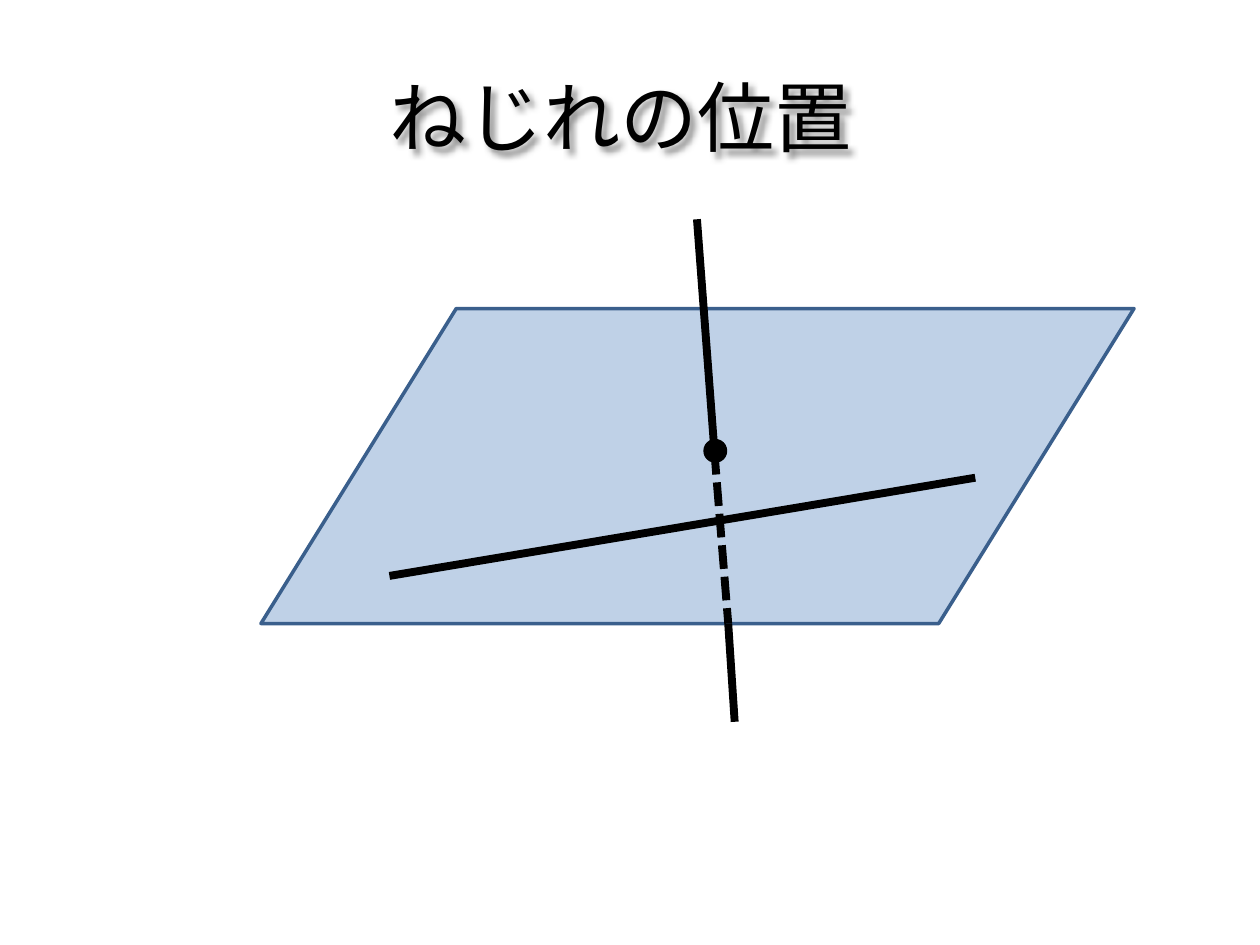
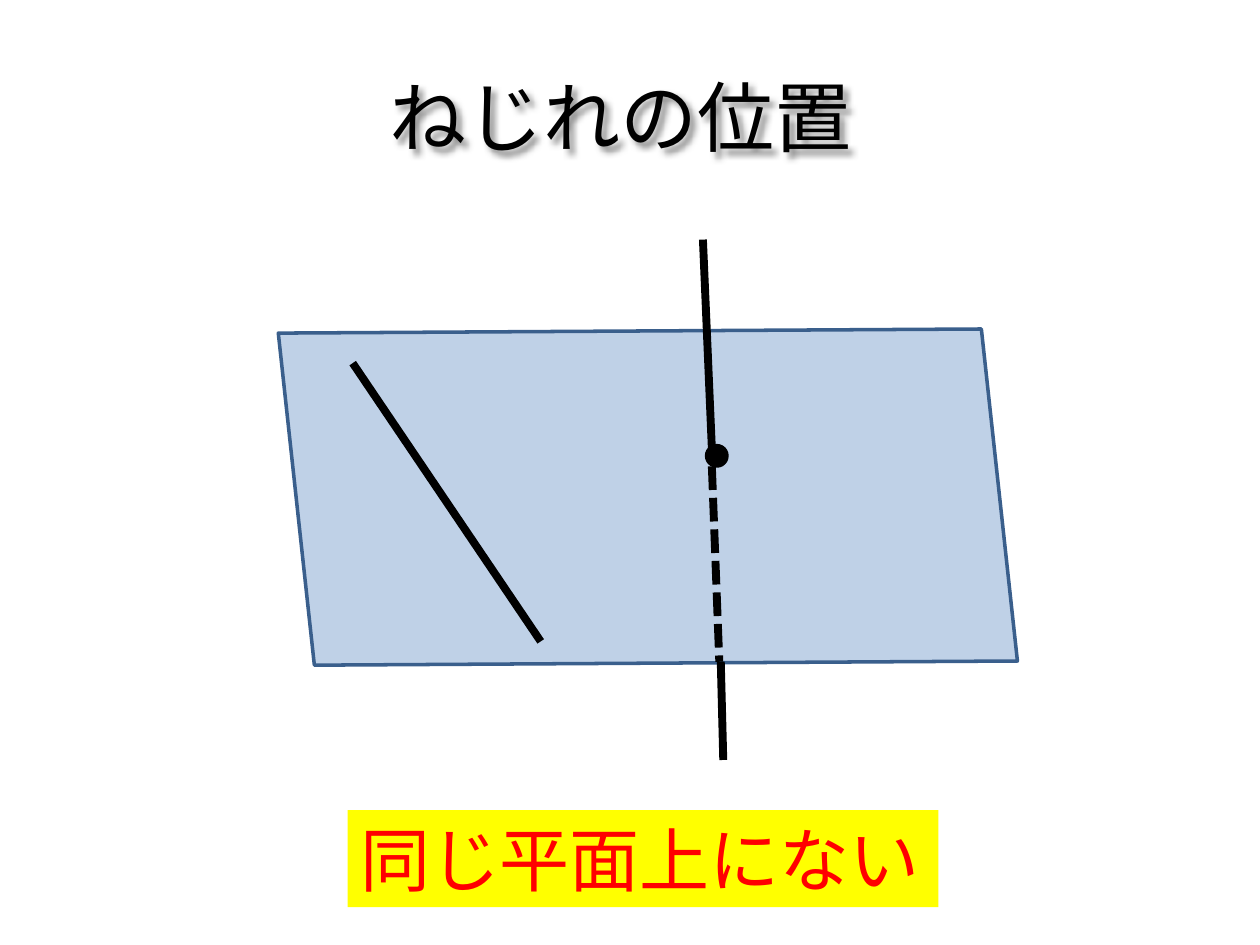
from lxml.etree import SubElement
from pptx import Presentation
from pptx.dml.color import RGBColor
from pptx.enum.dml import MSO_LINE
from pptx.enum.lang import MSO_LANGUAGE_ID
from pptx.enum.shapes import MSO_CONNECTOR, MSO_SHAPE
from pptx.enum.text import MSO_ANCHOR, MSO_AUTO_SIZE, PP_ALIGN
from pptx.oxml.ns import qn
from pptx.util import Cm, Pt

# Content: places in centimetres, lines as (start, end)
TITLE = "ねじれの位置"
SLIDES = [
    {
        "plane": {"box": (5.26, 6.22, 17.6, 6.35), "rotation": 180, "slant": 0.62},
        "line_in_plane": ((7.85, 11.61), (19.66, 9.63)),
        "line_above": ((14.05, 4.42), (14.4, 9.07)),
        "line_hidden": ((14.4, 9.09), (14.68, 12.57)),
        "line_below": ((14.68, 12.57), (14.81, 14.55)),
        "crossing": (14.42, 9.09),
        "conclusion": None,
    },
    {
        "plane": {"box": (8.97, 2.97, 8.18, 14.1), "rotation": 263.8, "slant": 0.177},
        "line_in_plane": ((7.11, 7.32), (10.9, 12.93)),
        "line_above": ((14.17, 4.83), (14.35, 9.04)),
        "line_hidden": ((14.35, 9.4), (14.5, 13.34)),
        "line_below": ((14.53, 13.34), (14.58, 15.32)),
        "crossing": (14.45, 9.19),
        "conclusion": "同じ平面上にない",
    },
]

# Shared style
COLORS = {
    "ink": "000000",
    "plane": "4F81BD",
    "plane_edge": "3A5F8C",
    "label": "FFFF00",
    "label_text": "FF0000",
}
FONT = "Calibri"
TITLE_BOX = (1.09, 0.74, 22.86, 3.18)
LABEL_BOX = (7.01, 16.33, 11.91, 1.96)
POINT_SIZE = 0.41
PLANE_OPACITY = 36


def color(name):
    return RGBColor.from_string(COLORS[name])


def lengths(values):
    return [Cm(value) for value in values]


def add_text(slide, box, text, size, color_name):
    shape = slide.shapes.add_textbox(*lengths(box))
    paragraph = shape.text_frame.paragraphs[0]
    run = paragraph.add_run()
    run.text = text
    run.font.name = FONT
    run.font.size = Pt(size)
    run.font.color.rgb = color(color_name)
    run.font.language_id = MSO_LANGUAGE_ID.JAPANESE
    return shape


def add_title(slide):
    shape = add_text(slide, TITLE_BOX, TITLE, 44, "ink")
    shape.text_frame.word_wrap = True
    shape.text_frame.vertical_anchor = MSO_ANCHOR.MIDDLE
    shape.text_frame.paragraphs[0].alignment = PP_ALIGN.CENTER
    # Soft shadow below and to the right of the letters
    effects = SubElement(shape.element.spPr, qn("a:effectLst"))
    shadow = SubElement(effects, qn("a:outerShdw"), blurRad="38100",
                        dist="38100", dir="2700000", algn="tl")
    black = SubElement(shadow, qn("a:srgbClr"), val=COLORS["ink"])
    SubElement(black, qn("a:alpha"), val="43000")


def add_filled(slide, kind, box, fill, edge):
    shape = slide.shapes.add_shape(kind, *lengths(box))
    shape.shadow.inherit = False
    shape.fill.solid()
    shape.fill.fore_color.rgb = color(fill)
    shape.line.color.rgb = color(edge)
    shape.line.width = Pt(2)
    return shape


def add_plane(slide, box, rotation, slant):
    plane = add_filled(slide, MSO_SHAPE.PARALLELOGRAM, box, "plane", "plane_edge")
    plane.rotation = rotation
    plane.adjustments[0] = slant
    fill_color = plane.element.spPr.find(qn("a:solidFill"))[0]
    SubElement(fill_color, qn("a:alpha"), val=str(PLANE_OPACITY * 1000))


def add_line(slide, start, end, dashed=False):
    line = slide.shapes.add_connector(MSO_CONNECTOR.STRAIGHT, *lengths(start + end))
    line.line.color.rgb = color("ink")
    line.line.width = Pt(4.5)
    if dashed:
        line.line.dash_style = MSO_LINE.SQUARE_DOT
    SubElement(line.element.spPr, qn("a:effectLst"))


def add_crossing(slide, center):
    corner = tuple(value - POINT_SIZE / 2 for value in center)
    add_filled(slide, MSO_SHAPE.FLOWCHART_CONNECTOR,
               corner + (POINT_SIZE, POINT_SIZE), "ink", "ink")


def add_conclusion(slide, text):
    shape = add_text(slide, LABEL_BOX, text, 40, "label_text")
    shape.fill.solid()
    shape.fill.fore_color.rgb = color("label")
    shape.text_frame.word_wrap = False
    shape.text_frame.auto_size = MSO_AUTO_SIZE.SHAPE_TO_FIT_TEXT


def main():
    presentation = Presentation()
    presentation.slide_width = Cm(25.4)
    presentation.slide_height = Cm(19.05)
    blank = presentation.slide_layouts[6]

    for figure in SLIDES:
        slide = presentation.slides.add_slide(blank)
        add_title(slide)
        add_plane(slide, **figure["plane"])
        for name in ("line_in_plane", "line_above", "line_hidden", "line_below"):
            add_line(slide, *figure[name], dashed=name == "line_hidden")
        add_crossing(slide, figure["crossing"])
        if figure["conclusion"]:
            add_conclusion(slide, figure["conclusion"])

    presentation.save("out.pptx")


if __name__ == "__main__":
    main()
